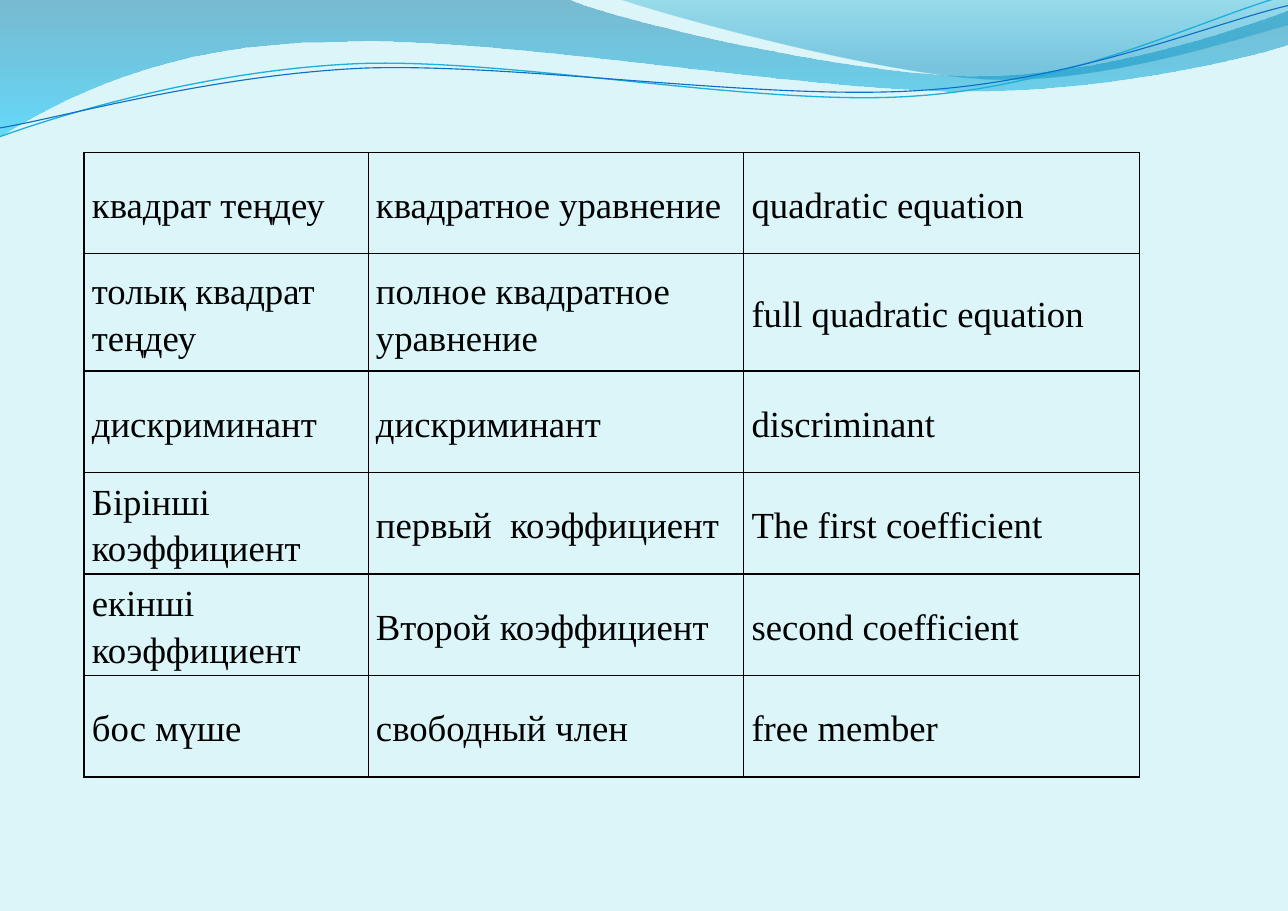
from dataclasses import dataclass

from lxml import etree
from pptx import Presentation
from pptx.dml.color import RGBColor
from pptx.enum.text import MSO_ANCHOR
from pptx.oxml.ns import qn
from pptx.shapes.autoshape import Shape
from pptx.slide import Slide
from pptx.table import _Cell
from pptx.text.text import TextFrame
from pptx.util import Cm, Pt

MIDDLE = MSO_ANCHOR.MIDDLE
BLANK_LAYOUT = 6

Point = tuple[float, float]


@dataclass(frozen=True)
class Theme:
    background: str = "DBF5F9"
    ink: str = "000000"
    font: str = "Times New Roman"
    term_size: float = 24
    border_width: float = 1


@dataclass(frozen=True)
class GradientStop:
    position: float
    color: str
    opacity: int


@dataclass(frozen=True)
class Wave:
    """Outline in cm: a segment of one point is straight, of three a Bezier curve."""
    start: Point
    segments: tuple[tuple[Point, ...], ...]
    gradient: tuple[GradientStop, ...] = ()
    line_color: str = ""
    line_width: float = 0


THEME = Theme()

WAVES = (
    # Wide band across the top
    Wave((0, 0), (
        ((13.08, -0.03),),
        ((14.12, 0.46), (19.71, 1.75), (22.53, 1.75)),
        ((25.35, 1.75), (28.47, 0.71), (29.7, 0.25)),
        ((29.74, 1.02),),
        ((29.21, 1.22), (25.83, 2.13), (22.15, 2.11)),
        ((18.47, 2.11), (11.33, 0.79), (7.65, 0.97)),
        ((3.84, 0.99), (1.37, 2.31), (-0.03, 3.18)),
    ), gradient=(GradientStop(0, "0074A1", 45), GradientStop(1, "00C6FD", 55))),
    # Band at the top right
    Wave((14.22, -0.03), (
        ((15.14, 0.3), (20.24, 1.73), (22.83, 1.83)),
        ((25.43, 1.93), (28.55, 0.89), (29.7, 0.58)),
        ((29.7, 0),),
    ), gradient=(GradientStop(0, "00A1CE", 30), GradientStop(0.8, "008BBF", 45))),
    # Two thin strands
    Wave((0, 3.15), (
        ((1.42, 2.64), (4.7, 1.63), (8.2, 1.47)),
        ((11.73, 1.32), (17.6, 2.49), (21.16, 2.21)),
        ((24.74, 1.96), (27.86, 0.38), (29.64, -0.1)),
    ), line_color="1CB0DA", line_width=0.85),
    Wave((0, 2.95), (
        ((1.4, 2.72), (4.85, 1.73), (8.41, 1.57)),
        ((11.96, 1.45), (17.73, 2.34), (21.29, 2.08)),
        ((24.84, 1.85), (27.97, 0.53), (29.7, 0.13)),
    ), line_color="0F6FC6", line_width=0.75),
)

# Kazakh, Russian, English
TERMS = (
    ("квадрат теңдеу", "квадратное уравнение", "quadratic equation"),
    ("толық квадрат теңдеу", "полное квадратное уравнение", "full quadratic equation"),
    ("дискриминант", "дискриминант", "discriminant"),
    ("Бірінші коэффициент", "первый  коэффициент", "The first coefficient"),
    ("екінші коэффициент", "Второй коэффициент", "second coefficient"),
    ("бос мүше", "свободный член", "free member"),
)
COLUMN_WIDTHS = (6.55, 8.66, 9.12)
ROW_HEIGHTS = (2.34, 2.7, 2.34, 2.34, 2.34, 2.34)


def bend_outline(shape: Shape, wave: Wave) -> None:
    """Join the three straight steps of each curved segment into one Bezier curve."""
    steps = list(shape._element.spPr.iter(qn("a:lnTo")))
    for segment in wave.segments:
        segment_steps, steps = steps[:len(segment)], steps[len(segment):]
        if len(segment) == 3:
            curve = etree.Element(qn("a:cubicBezTo"))
            segment_steps[0].addprevious(curve)
            for step in segment_steps:
                curve.append(step[0])
                step.getparent().remove(step)


def fill_gradient(shape: Shape, stops: tuple[GradientStop, ...]) -> None:
    shape.fill.gradient()
    shape.fill.gradient_angle = 270
    for target, stop in zip(shape.fill.gradient_stops, stops):
        target.position = stop.position
        target.color.rgb = RGBColor.from_string(stop.color)
    colors = shape._element.spPr.iter(qn("a:srgbClr"))
    for color, stop in zip(colors, stops):
        etree.SubElement(color, qn("a:alpha"), val=str(stop.opacity * 1000))


def draw_wave(slide: Slide, wave: Wave) -> None:
    builder = slide.shapes.build_freeform(*map(Cm, wave.start))
    points = [(Cm(x), Cm(y)) for segment in wave.segments for x, y in segment]
    builder.add_line_segments(points, close=False)
    shape = builder.convert_to_shape()
    bend_outline(shape, wave)
    shape.shadow.inherit = False
    if wave.gradient:
        outline = next(shape._element.spPr.iter(qn("a:path")))
        etree.SubElement(outline, qn("a:close"))
        fill_gradient(shape, wave.gradient)
        shape.line.fill.background()
    else:
        shape.fill.background()
        shape.line.color.rgb = RGBColor.from_string(wave.line_color)
        shape.line.width = Pt(wave.line_width)


def write_text(frame: TextFrame, text: str, *, size: float, color: str, font: str,
               line_spacing: float = 1, space_after: float = 0) -> None:
    frame.word_wrap = True
    paragraph = frame.paragraphs[0]
    paragraph.line_spacing = line_spacing
    paragraph.space_after = Pt(space_after)
    run = paragraph.add_run()
    run.text = text
    run.font.size = Pt(size)
    run.font.name = font
    run.font.color.rgb = RGBColor.from_string(color)


def border_cell(cell: _Cell, color: str, width: float) -> None:
    properties = cell._tc.get_or_add_tcPr()
    for index, side in enumerate(("a:lnL", "a:lnR", "a:lnT", "a:lnB")):
        edge = etree.Element(qn(side), w=str(Pt(width)))
        solid = etree.SubElement(edge, qn("a:solidFill"))
        etree.SubElement(solid, qn("a:srgbClr"), val=color)
        properties.insert(index, edge)


def draw_glossary(slide: Slide) -> None:
    glossary = slide.shapes.add_table(
        len(TERMS), len(COLUMN_WIDTHS), Cm(1.94), Cm(3.51),
        Cm(sum(COLUMN_WIDTHS)), Cm(sum(ROW_HEIGHTS))).table
    glossary.first_row = False
    glossary.horz_banding = False
    for column, width in zip(glossary.columns, COLUMN_WIDTHS):
        column.width = Cm(width)
    for row, height, terms in zip(glossary.rows, ROW_HEIGHTS, TERMS):
        row.height = Cm(height)
        for cell, term in zip(row.cells, terms):
            cell.fill.background()
            cell.vertical_anchor = MIDDLE
            cell.margin_left = cell.margin_right = Cm(0.18)
            cell.margin_top = cell.margin_bottom = Cm(0)
            border_cell(cell, THEME.ink, THEME.border_width)
            write_text(cell.text_frame, term, size=THEME.term_size, color=THEME.ink,
                       font=THEME.font, line_spacing=1.15, space_after=10)


def main() -> None:
    presentation = Presentation()
    presentation.slide_width = Cm(29.7)
    presentation.slide_height = Cm(21)
    slide = presentation.slides.add_slide(presentation.slide_layouts[BLANK_LAYOUT])
    slide.background.fill.solid()
    slide.background.fill.fore_color.rgb = RGBColor.from_string(THEME.background)
    for wave in WAVES:
        draw_wave(slide, wave)
    draw_glossary(slide)
    presentation.save("out.pptx")


if __name__ == "__main__":
    main()
